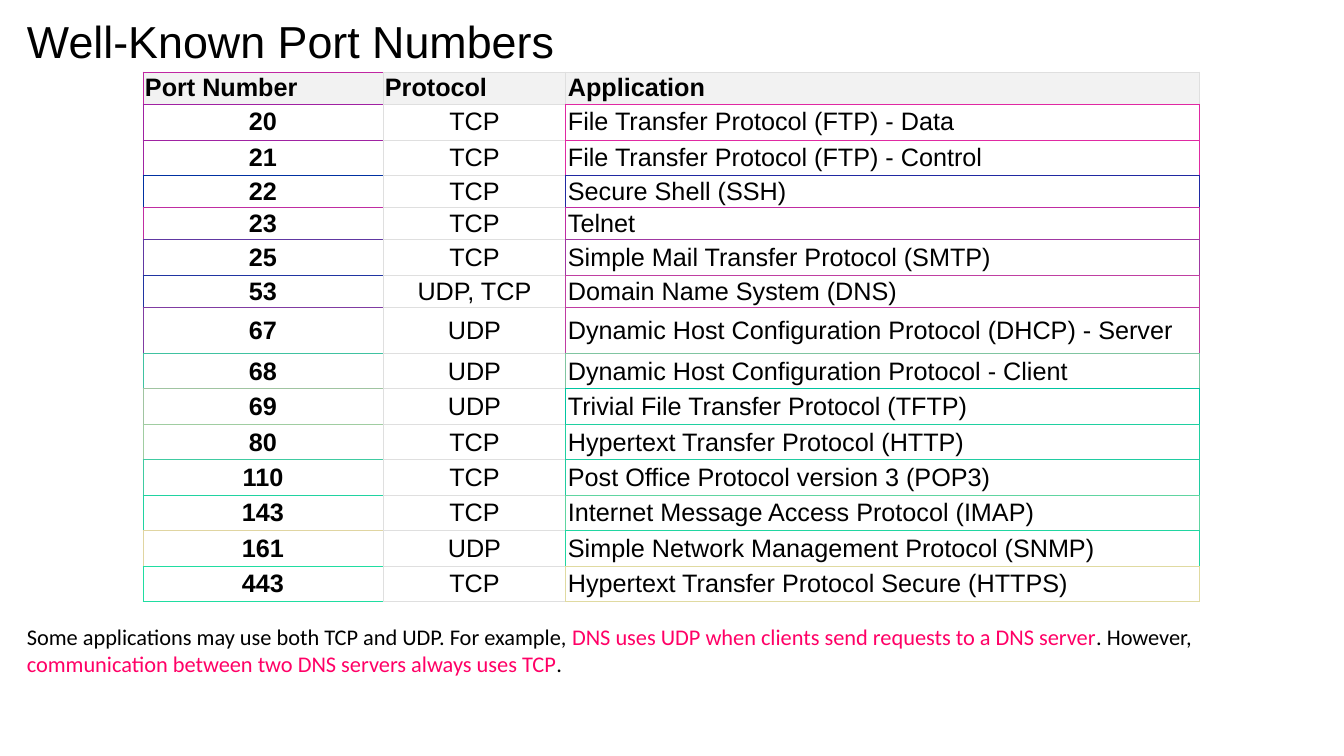
from lxml.etree import SubElement
from pptx import Presentation
from pptx.dml.color import RGBColor
from pptx.enum.text import MSO_ANCHOR as Anchor, MSO_AUTO_SIZE as AutoSize, PP_ALIGN as Align
from pptx.oxml.ns import qn
from pptx.util import Pt

TITLE = "Well-Known Port Numbers"
BLACK, WHITE, PINK, GREY, PALE = "000000", "FFFFFF", "FF0066", "DFDFDF", "F2F2F2"

HEADINGS = ("Port Number", "Protocol", "Application")
# port, protocol, application, port border, application border, row height in px
PORTS = [
    ("20", "TCP", "File Transfer Protocol (FTP) - Data", "A021A2", "E028A2", 36),
    ("21", "TCP", "File Transfer Protocol (FTP) - Control", "A023A2", "E02AA2", 35),
    ("22", "TCP", "Secure Shell (SSH)", "0031A2", "2029A2", 32),
    ("23", "TCP", "Telnet", "C02DA2", "C02CA2", 32),
    ("25", "TCP", "Simple Mail Transfer Protocol (SMTP)", "6038A2", "A038A2", 36),
    ("53", "UDP, TCP", "Domain Name System (DNS)", "2035A2", "C03FA2", 32),
    ("67", "UDP", "Dynamic Host Configuration Protocol (DHCP) - Server", "803CA2", "C03BA2", 46),
    ("68", "UDP", "Dynamic Host Configuration Protocol - Client", "40C2A1", "80C5A1", 35),
    ("69", "UDP", "Trivial File Transfer Protocol (TFTP)", "A0C4A1", "00C5A1", 36),
    ("80", "TCP", "Hypertext Transfer Protocol (HTTP)", "A0CDA1", "20D0A1", 35),
    ("110", "TCP", "Post Office Protocol version 3 (POP3)", "40CBA1", "20CCA1", 36),
    ("143", "TCP", "Internet Message Access Protocol (IMAP)", "20D3A1", "60D5A1", 35),
    ("161", "UDP", "Simple Network Management Protocol (SNMP)", "E0D5A1", "20D6A1", 36),
    ("443", "TCP", "Hypertext Transfer Protocol Secure (HTTPS)", "20DDA1", "E0DAA1", 35),
]
NOTE = [
    ("Some applications may use both TCP and UDP. For example, ", BLACK),
    ("DNS uses UDP when clients send requests to a DNS server", PINK),
    (". However, ", BLACK),
    ("communication between two DNS servers always uses TCP", PINK),
    (".", BLACK),
]

SLIDE_SIZE = (1344, 756)
TITLE_BOX = (27, 16, 1191, 56)
NOTE_BOX = (17, 618, 1317, 65)
TABLE_LEFT, TABLE_TOP = 143, 72
COLUMN_WIDTHS = (240, 183, 634)
HEADING_HEIGHT = 31


def px(length):
    return round(length * 914400 / 100.8)


def rgb(color):
    return RGBColor.from_string(color)


def add_run(paragraph, text, size, font, color, bold=False):
    run = paragraph.add_run()
    run.text = text
    run.font.size, run.font.name, run.font.bold = Pt(size), font, bold
    run.font.color.rgb = rgb(color)


def set_margins(target, left, top, right, bottom):
    target.margin_left, target.margin_top = px(left), px(top)
    target.margin_right, target.margin_bottom = px(right), px(bottom)


def set_borders(cell, colors):
    """Draw the left, right, top and bottom edges, ahead of the cell's fill."""
    properties = cell._tc.get_or_add_tcPr()
    for position, (side, color) in enumerate(zip("LRTB", colors)):
        edge = SubElement(properties, qn(f"a:ln{side}"), w=str(Pt(0.75)))
        SubElement(SubElement(edge, qn("a:solidFill")), qn("a:srgbClr"), val=color)
        properties.insert(position, edge)


def add_title(slide):
    title = slide.shapes.title
    title.left, title.top, title.width, title.height = map(px, TITLE_BOX)
    frame = title.text_frame
    set_margins(frame, 0, 5, 10, 5)
    frame.vertical_anchor = Anchor.MIDDLE
    frame.word_wrap = True
    heading = frame.paragraphs[0]
    heading.alignment, heading.line_spacing = Align.LEFT, 0.9
    add_run(heading, TITLE, 32, "Arial", BLACK)


def add_port_table(slide):
    texts = [HEADINGS] + [row[:3] for row in PORTS]
    edges = [("C027A2", GREY, GREY)] + [(row[3], GREY, row[4]) for row in PORTS]
    heights = [HEADING_HEIGHT] + [row[5] for row in PORTS]
    last_row, last_column = len(texts) - 1, len(HEADINGS) - 1
    table = slide.shapes.add_table(
        len(texts), len(HEADINGS), px(TABLE_LEFT), px(TABLE_TOP),
        px(sum(COLUMN_WIDTHS)), px(sum(heights))).table
    table.horz_banding = False
    for column, width in zip(table.columns, COLUMN_WIDTHS):
        column.width = px(width)
    for r, height in enumerate(heights):
        table.rows[r].height = px(height)
        for c, text in enumerate(texts[r]):
            cell = table.cell(r, c)
            cell.fill.solid()
            cell.fill.fore_color.rgb = rgb(WHITE if r else PALE)
            # A shared edge takes the colour of the cell to its right or below it.
            own = edges[r][c]
            right = edges[r][min(c + 1, last_column)]
            below = edges[min(r + 1, last_row)][c]
            set_borders(cell, (own, right, own, below))
            set_margins(cell, 2, 2, 2, 2)
            cell.vertical_anchor = Anchor.MIDDLE
            paragraph = cell.text_frame.paragraphs[0]
            paragraph.alignment = Align.CENTER if r and c < last_column else Align.LEFT
            add_run(paragraph, text, 18, "Arial", BLACK, bold=r == 0 or c == 0)


def add_note(slide):
    frame = slide.shapes.add_textbox(*map(px, NOTE_BOX)).text_frame
    frame.word_wrap = True
    frame.auto_size = AutoSize.SHAPE_TO_FIT_TEXT
    for text, color in NOTE:
        add_run(frame.paragraphs[0], text, 16, "Calibri", color)


def main():
    deck = Presentation()
    deck.slide_width, deck.slide_height = map(px, SLIDE_SIZE)
    slide = deck.slides.add_slide(deck.slide_layouts[5])
    add_title(slide)
    add_port_table(slide)
    add_note(slide)
    deck.save("out.pptx")


if __name__ == "__main__":
    main()
